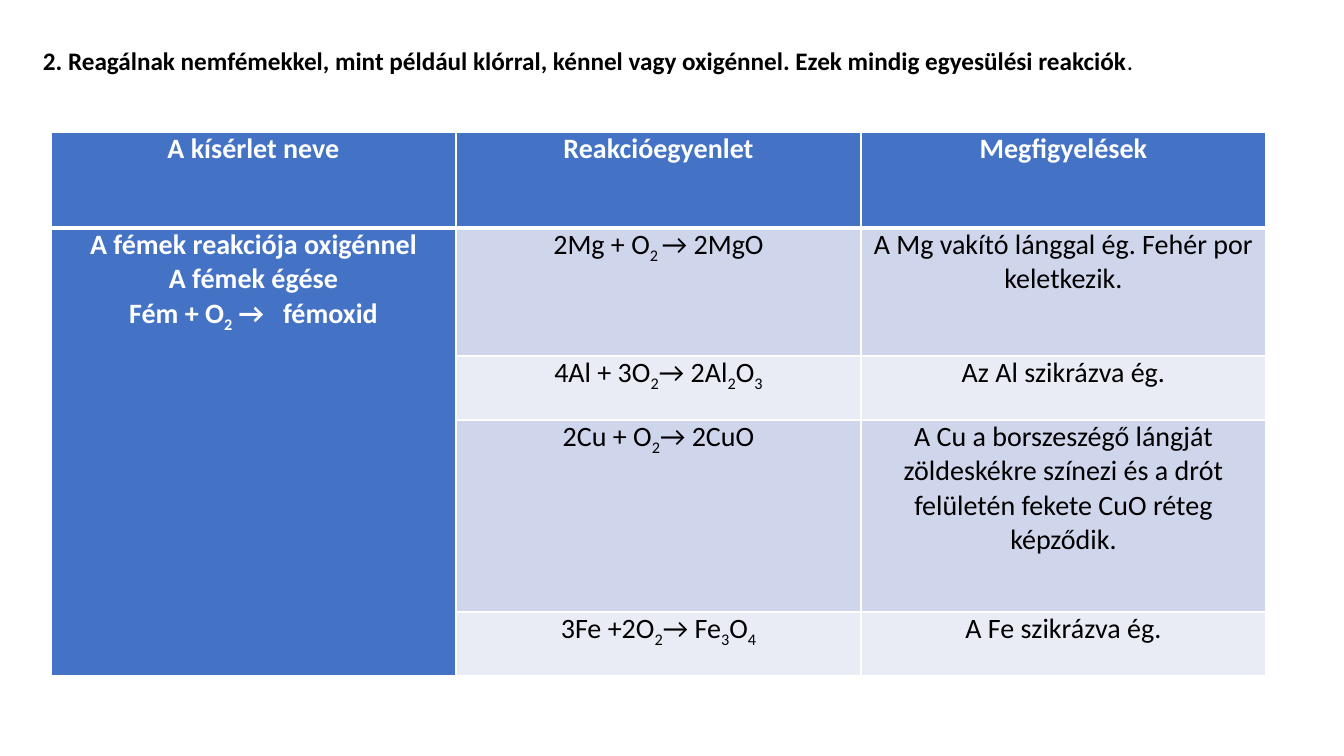
from lxml import etree
from pptx import Presentation
from pptx.dml.color import RGBColor
from pptx.enum.text import MSO_AUTO_SIZE, PP_ALIGN
from pptx.oxml.ns import qn
from pptx.util import Emu, Pt

CENTER = PP_ALIGN.CENTER
GROW = MSO_AUTO_SIZE.SHAPE_TO_FIT_TEXT

FONT = "Calibri"
COLORS = {
    "header": "4472C4",
    "dark_band": "CFD5EA",
    "light_band": "E9EBF5",
    "white": "FFFFFF",
    "black": "000000",
}
TITLE = [
    ("2. Reagálnak nemfémekkel, mint például klórral, kénnel vagy oxigénnel. "
     "Ezek mindig egyesülési reakciók", 18),
    (".", 14),
]
SUBSCRIPT_MARK = "|"
HEADERS = ["A kísérlet neve", "Reakcióegyenlet", "Megfigyelések"]
EXPERIMENT = [
    "A fémek reakciója oxigénnel",
    "A fémek égése",
    "Fém + O|2| →   fémoxid",
]
REACTIONS = [
    ("2Mg + O|2 |→ 2MgO", "A Mg vakító lánggal ég. Fehér por keletkezik."),
    ("4Al + 3O|2|→ 2Al|2|O|3", "Az Al szikrázva ég."),
    ("2Cu + O|2|→ 2CuO",
     "A Cu a borszeszégő lángját zöldeskékre színezi és a drót felületén "
     "fekete CuO réteg képződik."),
    ("3Fe +2O|2|→ Fe|3|O|4", "A Fe szikrázva ég."),
]
SLIDE_SIZE = (1344, 756)
TITLE_BOX = (33, 38, 1183, 41)
TABLE_ORIGIN = (51, 132)
COLUMN_WIDTH = 405
ROW_HEIGHTS = [96, 128, 64, 192, 64]
CELL_INSET = 7


def px(length):
    return Emu(round(length * 914400 / 100.8))


def add_span(para, text, size, color, bold):
    span = para.add_run()
    span.text = text
    span.font.name = FONT
    span.font.size = Pt(size)
    span.font.bold = bold
    span.font.color.rgb = RGBColor.from_string(COLORS[color])
    return span


def set_borders(cell, widths):
    properties = cell._tc.get_or_add_tcPr()
    for side, width in widths.items():
        line = etree.SubElement(properties, qn("a:ln" + side), w=str(Pt(width)))
        fill = etree.SubElement(line, qn("a:solidFill"))
        etree.SubElement(fill, qn("a:srgbClr"), val=COLORS["white"])


def style_cell(cell, row, fill):
    set_borders(cell, {"L": 1, "R": 1, "T": 3 if row == 1 else 1,
                       "B": 3 if row == 0 else 1})
    cell.fill.solid()
    cell.fill.fore_color.rgb = RGBColor.from_string(COLORS[fill])
    cell.margin_left = cell.margin_right = px(CELL_INSET)
    cell.margin_top = cell.margin_bottom = 0


def write_cell(cell, lines, color, bold):
    frame = cell.text_frame
    for number, line in enumerate(lines):
        para = frame.add_paragraph() if number else frame.paragraphs[0]
        para.alignment = CENTER
        for part, text in enumerate(line.split(SUBSCRIPT_MARK)):
            span = add_span(para, text, 20, color, bold)
            if part % 2:
                span.font._element.set("baseline", "-25000")


def add_title(page):
    box = page.shapes.add_textbox(*map(px, TITLE_BOX))
    box.text_frame.word_wrap = True
    box.text_frame.auto_size = GROW
    para = box.text_frame.paragraphs[0]
    para.line_spacing = 1.07
    para.space_after = Pt(8)
    for text, size in TITLE:
        add_span(para, text, size, "black", True)


def add_reaction_table(page):
    rows, columns = len(ROW_HEIGHTS), len(HEADERS)
    size = (COLUMN_WIDTH * columns, sum(ROW_HEIGHTS))
    table = page.shapes.add_table(
        rows, columns, *map(px, TABLE_ORIGIN + size)).table
    for column in table.columns:
        column.width = px(COLUMN_WIDTH)
    for row, height in enumerate(ROW_HEIGHTS):
        table.rows[row].height = px(height)
        band = "dark_band" if row % 2 else "light_band"
        for column in range(columns):
            fill = "header" if row == 0 or column == 0 else band
            style_cell(table.cell(row, column), row, fill)

    for column, header in enumerate(HEADERS):
        write_cell(table.cell(0, column), [header], "white", True)
    experiment_cell = table.cell(1, 0)
    experiment_cell.merge(table.cell(rows - 1, 0))
    write_cell(experiment_cell, EXPERIMENT, "white", True)
    for row, reaction in enumerate(REACTIONS, 1):
        for column, text in enumerate(reaction, 1):
            write_cell(table.cell(row, column), [text], "black", False)


def main():
    deck = Presentation()
    deck.slide_width, deck.slide_height = map(px, SLIDE_SIZE)
    page = deck.slides.add_slide(deck.slide_layouts[6])
    add_reaction_table(page)
    add_title(page)
    deck.save("out.pptx")


if __name__ == "__main__":
    main()
